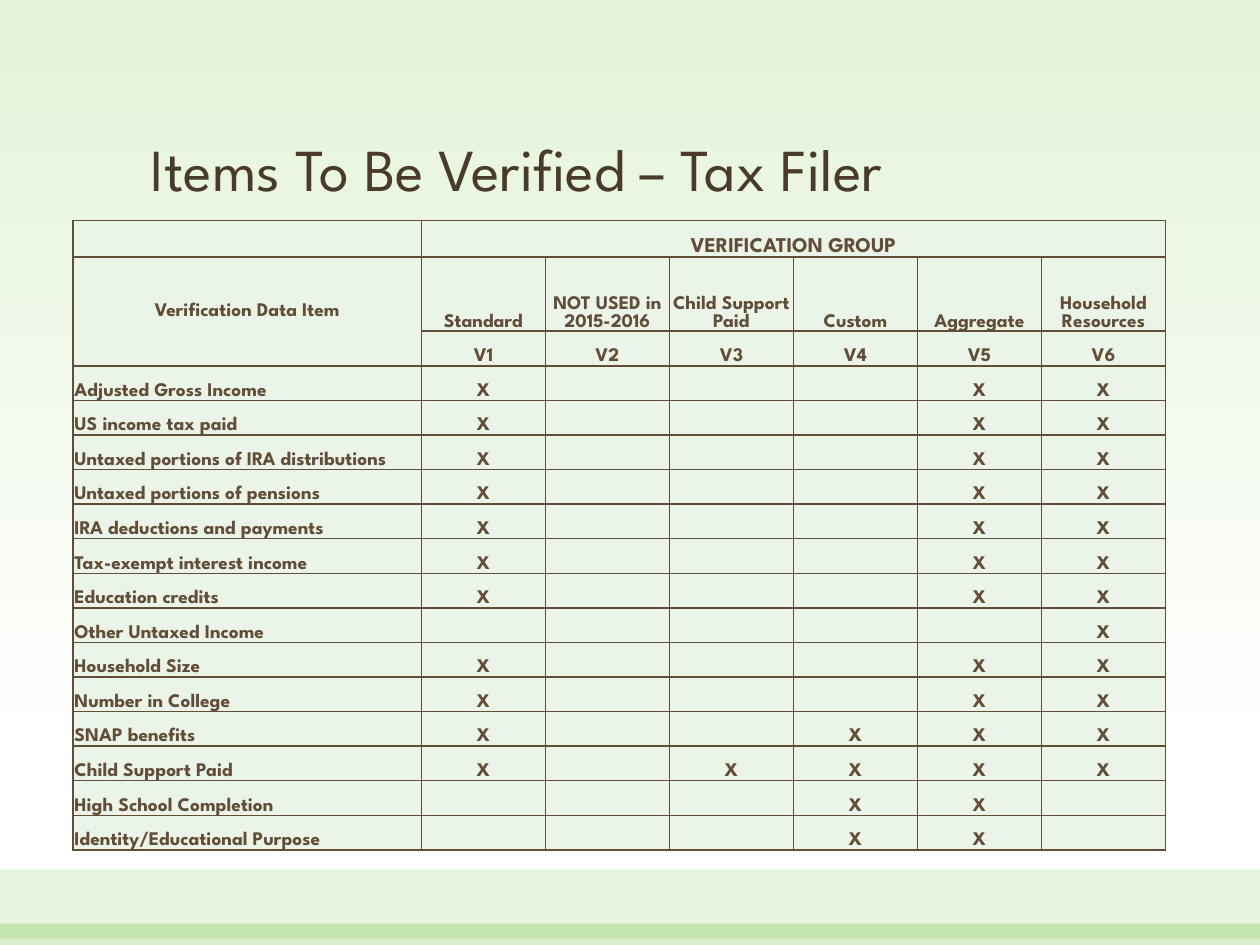
from lxml.etree import SubElement
from pptx import Presentation
from pptx.dml.color import RGBColor
from pptx.enum.shapes import MSO_SHAPE
from pptx.enum.text import MSO_ANCHOR, PP_ALIGN
from pptx.oxml.ns import qn
from pptx.util import Pt

FONT = "League Spartan"
COLORS = {
    "sky": "E3F3D8",
    "white": "FFFFFF",
    "band": "72C23C",
    "title": "4A3A2A",
    "ink": "624D38",
    "cell": "EBF4E8",
}
GROUPS = [
    ("Standard", "V1"),
    ("NOT USED in 2015-2016", "V2"),
    ("Child Support Paid", "V3"),
    ("Custom", "V4"),
    ("Aggregate", "V5"),
    ("Household Resources", "V6"),
]
# Each item with the numbers of the groups that verify it
ITEMS = [
    ("Adjusted Gross Income", (1, 5, 6)),
    ("US income tax paid", (1, 5, 6)),
    ("Untaxed portions of IRA distributions", (1, 5, 6)),
    ("Untaxed portions of pensions", (1, 5, 6)),
    ("IRA deductions and payments", (1, 5, 6)),
    ("Tax-exempt interest income", (1, 5, 6)),
    ("Education credits", (1, 5, 6)),
    ("Other Untaxed Income", (6,)),
    ("Household Size", (1, 5, 6)),
    ("Number in College", (1, 5, 6)),
    ("SNAP benefits", (1, 4, 5, 6)),
    ("Child Support Paid", (1, 3, 4, 5, 6)),
    ("High School Completion", (4, 5)),
    ("Identity/Educational Purpose", (4, 5)),
]


def rgb(name):
    return RGBColor.from_string(COLORS[name])


def write(frame, text, size=11, color="ink", bold=True, align=PP_ALIGN.CENTER, spacing=None):
    para = frame.paragraphs[0]
    para.alignment = align
    para.line_spacing = spacing
    if not text:
        # Keeps an empty cell from growing to the default text size
        SubElement(para._p, qn("a:endParaRPr"), sz=str(size * 100))
        return
    span = para.add_run()
    span.text = text
    span.font.name = FONT
    span.font.size = Pt(size)
    span.font.bold = bold
    span.font.color.rgb = rgb(color)


def paint_background(page):
    fill = page.background.fill
    fill.gradient()
    fill.gradient_angle = 270
    for stop, (color, position) in zip(fill.gradient_stops, [("sky", 0), ("white", 0.79)]):
        stop.color.rgb = rgb(color)
        stop.position = position


def add_band(page, left, top, width, height, opacity):
    band = page.shapes.add_shape(MSO_SHAPE.RECTANGLE, Pt(left), Pt(top), Pt(width), Pt(height))
    band.shadow.inherit = False
    band.line.fill.background()
    band.fill.solid()
    band.fill.fore_color.rgb = rgb("band")
    color = band._element.spPr.find(qn("a:solidFill"))[0]
    SubElement(color, qn("a:alpha"), val=str(opacity * 1000))


def add_footer(page, left, top, width, height):
    add_band(page, left, top, width, height - 3.6, 17)
    add_band(page, left, top + height - 12.24, width, 12.24, 28)


def add_title(page, left, top, width, height):
    box = page.shapes.add_textbox(Pt(left), Pt(top), Pt(width), Pt(height))
    frame = box.text_frame
    frame.word_wrap = True
    frame.vertical_anchor = MSO_ANCHOR.BOTTOM
    write(frame, "Items To Be Verified – Tax Filer", size=34, color="title",
          bold=False, align=PP_ALIGN.LEFT, spacing=0.9)


def style_cell(cell):
    cell.margin_left = cell.margin_right = cell.margin_top = Pt(0.72)
    cell.margin_bottom = 0
    cell.vertical_anchor = MSO_ANCHOR.BOTTOM
    properties = cell._tc.get_or_add_tcPr()
    for side in ("lnL", "lnR", "lnT", "lnB"):
        line = SubElement(properties, qn(f"a:{side}"), w=str(Pt(1)))
        fill = SubElement(line, qn("a:solidFill"))
        SubElement(fill, qn("a:srgbClr"), val=COLORS["ink"])
    cell.fill.solid()
    cell.fill.fore_color.rgb = rgb("cell")


def add_verification_table(page, left, top, width, height):
    names, codes = zip(*GROUPS)
    rows = [
        ("", "VERIFICATION GROUP", *[""] * (len(GROUPS) - 1)),
        ("Verification Data Item", *names),
        ("", *codes),
    ]
    for item, verified in ITEMS:
        rows.append((item, *("X" if number in verified else ""
                             for number in range(1, len(GROUPS) + 1))))

    table = page.shapes.add_table(len(rows), len(rows[0]), Pt(left), Pt(top),
                                  Pt(width), Pt(height)).table
    table.first_row = table.horz_banding = False

    item_width, heading_heights = 199, (21, 42.3)
    group_width = (width - item_width) / len(GROUPS)
    for index, column in enumerate(table.columns):
        column.width = Pt(group_width if index else item_width)
    row_height = (height - sum(heading_heights)) / (len(rows) - len(heading_heights))
    for index, row in enumerate(table.rows):
        row.height = Pt(heading_heights[index] if index < len(heading_heights) else row_height)

    for row_index, texts in enumerate(rows):
        for column_index, text in enumerate(texts):
            cell = table.cell(row_index, column_index)
            style_cell(cell)
            is_item = column_index == 0 and row_index > 2
            write(cell.text_frame, text, size=11 if row_index else 12,
                  align=PP_ALIGN.LEFT if is_item else PP_ALIGN.CENTER)

    table.cell(0, 1).merge(table.cell(0, len(GROUPS)))
    table.cell(1, 0).merge(table.cell(2, 0))
    table.cell(1, 0).vertical_anchor = MSO_ANCHOR.MIDDLE


def main():
    deck = Presentation()
    deck.slide_width, deck.slide_height = Pt(720), Pt(540)
    page = deck.slides.add_slide(deck.slide_layouts[6])
    paint_background(page)
    add_footer(page, 0, 496.8, 720, 43.2)
    add_title(page, 79.2, 34.56, 561.6, 85.68)
    add_verification_table(page, 41.8, 126, 624.2, 360)
    deck.save("out.pptx")


if __name__ == "__main__":
    main()
